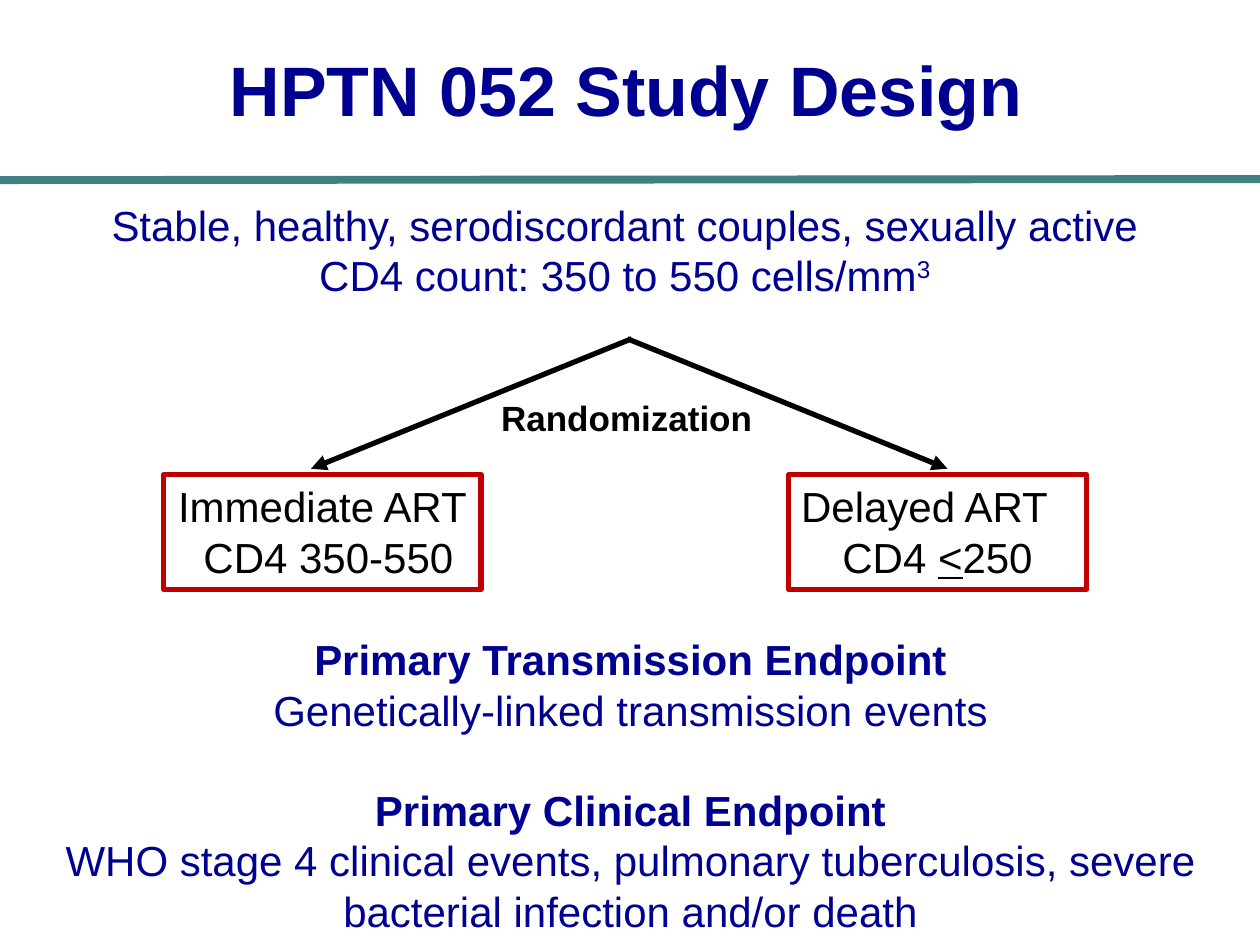
from dataclasses import dataclass
from typing import NamedTuple

from lxml.etree import SubElement
from pptx import Presentation
from pptx.dml.color import RGBColor as RGB
from pptx.enum.shapes import MSO_CONNECTOR as Link, MSO_SHAPE as Form
from pptx.enum.text import MSO_ANCHOR as Anchor, MSO_AUTO_SIZE as Fit, PP_ALIGN as Align
from pptx.oxml.ns import qn
from pptx.util import Cm, Pt

NAVY = RGB(0x00, 0x00, 0x90)
TEAL = RGB(0x3F, 0x80, 0x80)
RED = RGB(0xC0, 0x00, 0x00)
BLACK = RGB(0x00, 0x00, 0x00)


class Bit(NamedTuple):
    text: str
    bold: bool = False
    under: bool = False
    raised: bool = False


@dataclass
class Line:
    bits: list[Bit]
    align: Align = Align.CENTER
    inset: float = 0
    before: float = 0


@dataclass
class Arm:
    left: float
    width: float
    tip: float
    start: float
    lines: list[Line]


INTRO = [
    Line([Bit("Stable, healthy, serodiscordant couples, sexually active")]),
    Line([Bit("CD4 count: 350 to 550 cells/mm"), Bit("3", raised=True)]),
]
ENDS = [
    Line([Bit("Primary Transmission Endpoint", bold=True)]),
    Line([Bit("Genetically-linked transmission events")]),
    Line([Bit("Primary Clinical Endpoint", bold=True)], before=28.5),
    Line([Bit("WHO stage 4 clinical events, pulmonary tuberculosis, "
              "severe bacterial infection and/or death")]),
]
ARMS = [
    Arm(3.3, 6.4, 6.27, 12.73, [
        Line([Bit("Immediate ART")]),
        Line([Bit("CD4 350-550")], inset=0.24),
    ]),
    Arm(15.9, 6, 19.1, 12.65, [
        Line([Bit("Delayed ART")], align=Align.LEFT),
        Line([Bit("CD4 "), Bit("<", under=True), Bit("250")]),
    ]),
]


def write(shape, lines: list[Line], size: float, color: RGB) -> None:
    frame = shape.text_frame
    frame.word_wrap = True
    frame.auto_size = Fit.NONE
    for i, line in enumerate(lines):
        para = frame.paragraphs[0] if i == 0 else frame.add_paragraph()
        props = para._p.get_or_add_pPr()
        props.set("marL", str(Cm(line.inset)))
        props.set("indent", "0")
        SubElement(props, qn("a:buNone"))
        para.alignment = line.align
        para.space_before = Pt(line.before)
        for bit in line.bits:
            run = para.add_run()
            run.text = bit.text
            font = run.font
            font.name, font.size, font.bold = "Arial", Pt(size), bit.bold
            font.underline = bit.under
            font.color.rgb = color
            if bit.raised:
                run._r.get_or_add_rPr().set("baseline", "30000")


def place(shape, left: float, top: float, width: float, height: float) -> None:
    shape.left, shape.top = Cm(left), Cm(top)
    shape.width, shape.height = Cm(width), Cm(height)


def link(slide, x: float, y: float, to_x: float, to_y: float,
         color: RGB, width: float, head: bool = False) -> None:
    line = slide.shapes.add_connector(Link.STRAIGHT, Cm(x), Cm(y), Cm(to_x), Cm(to_y))
    line.line.color.rgb = color
    line.line.width = Pt(width)
    props = line._element.spPr
    if head:
        SubElement(props.get_or_add_ln(), qn("a:tailEnd"), type="triangle")
    SubElement(props, qn("a:effectLst"))


def label(slide, area: tuple, lines: list[Line], size: float, color: RGB) -> None:
    box = slide.shapes.add_textbox(*map(Cm, area))
    write(box, lines, size, color)


def draw(slide, arm: Arm) -> None:
    box = slide.shapes.add_shape(
        Form.RECTANGLE, Cm(arm.left), Cm(9.57), Cm(arm.width), Cm(2.31))
    box.shadow.inherit = False
    box.fill.background()
    box.line.color.rgb = RED
    box.line.width = Pt(3)
    write(box, arm.lines, 24, BLACK)
    box.text_frame.vertical_anchor = Anchor.TOP
    link(slide, arm.start, 6.83, arm.tip, 9.45, BLACK, 3, head=True)


def main() -> None:
    deck = Presentation()
    deck.slide_width, deck.slide_height = Cm(25.4), Cm(19.05)
    slide = deck.slides.add_slide(deck.slide_layouts[1])

    title = slide.shapes.title
    place(title, -0.08, 0, 25.4, 3.58)
    write(title, [Line([Bit("HPTN 052 Study Design", bold=True)])], 40, NAVY)
    title.text_frame.vertical_anchor = Anchor.MIDDLE

    body = slide.placeholders[1]
    place(body, 0.71, 12.65, 24, 6.4)
    write(body, ENDS, 24, NAVY)
    body.text_frame.vertical_anchor = Anchor.TOP

    link(slide, 0, 3.63, 25.4, 3.61, TEAL, 4.5)
    label(slide, (1.9, 3.89, 21.39, 2.31), INTRO, 24, NAVY)
    for arm in ARMS:
        draw(slide, arm)
    label(slide, (9.83, 7.87, 5.61, 1.12),
          [Line([Bit("Randomization", bold=True)])], 20, BLACK)
    deck.save("out.pptx")


if __name__ == "__main__":
    main()
